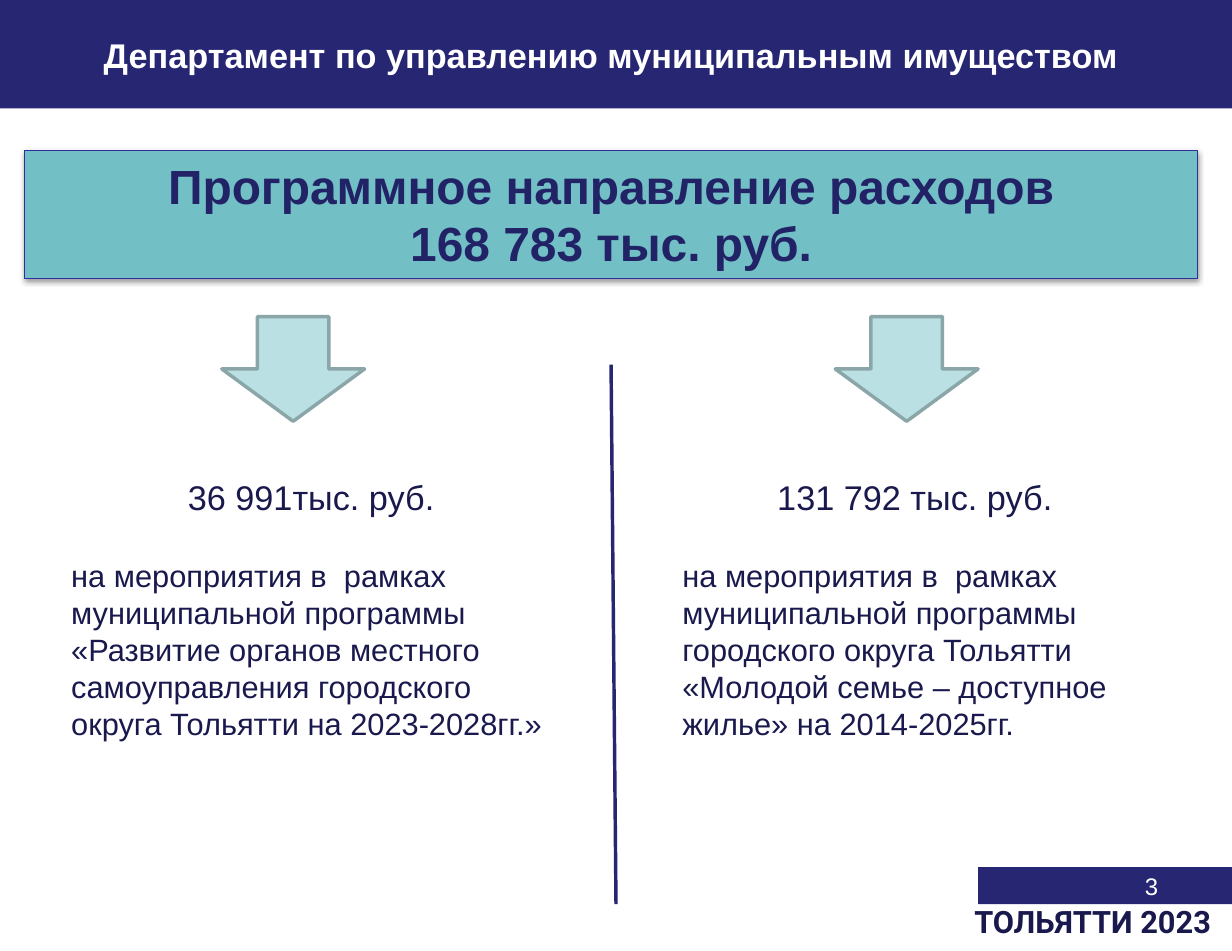
from lxml import etree
from pptx import Presentation
from pptx import util as u
from pptx.dml.color import RGBColor
from pptx.enum import shapes, text
from pptx.oxml import ns

NAVY = RGBColor(0x26, 0x26, 0x73)
INK = RGBColor(0x19, 0x19, 0x4D)
BANNER_INK = RGBColor(0x22, 0x22, 0x67)
BANNER_EDGE = RGBColor(0x2F, 0x2F, 0x98)
TEAL = RGBColor(0x72, 0xBF, 0xC5)
PALE_TEAL = RGBColor(0xBB, 0xE0, 0xE3)
ARROW_EDGE = RGBColor(0x8A, 0xA6, 0xA8)
WHITE = RGBColor(0xFF, 0xFF, 0xFF)

LEFT, CENTER, RIGHT = text.PP_ALIGN.LEFT, text.PP_ALIGN.CENTER, text.PP_ALIGN.RIGHT
TITLE_ONLY = 5


def add_effects(shape):
    return etree.SubElement(shape._element.spPr, ns.qn("a:effectLst"))


class BudgetSlide:
    font = "Arial"

    def __init__(self, deck):
        self.slide = deck.slides.add_slide(deck.slide_layouts[TITLE_ONLY])
        self.shapes = self.slide.shapes

    def format(self, paragraph, size, color, bold=False, align=LEFT, font=None):
        paragraph.alignment = align
        for run in paragraph.runs:
            run.font.name = font or self.font
            run.font.size = u.Pt(size)
            run.font.bold = bold
            run.font.color.rgb = color

    def title(self, words, height):
        title = self.shapes.title
        title.left, title.top = u.Inches(0), u.Inches(0)
        title.width, title.height = u.Inches(10), u.Inches(height)
        title.fill.solid()
        title.fill.fore_color.rgb = NAVY
        frame = title.text_frame
        frame.text = words
        frame.auto_size = text.MSO_AUTO_SIZE.NONE
        frame.vertical_anchor = text.MSO_ANCHOR.MIDDLE
        frame.margin_left, frame.margin_right = u.Inches(0.02), u.Inches(0.1)
        frame.margin_top, frame.margin_bottom = u.Inches(0.12), u.Inches(0.05)
        frame.paragraphs[0].line_spacing = 0.8
        self.format(frame.paragraphs[0], 20, WHITE, True, CENTER)

    def block(self, kind, box, fill, edge=None, weight=0.75):
        block = self.shapes.add_shape(kind, *map(u.Inches, box))
        block.shadow.inherit = False
        block.fill.solid()
        block.fill.fore_color.rgb = fill
        if edge is None:
            block.line.fill.background()
        else:
            block.line.color.rgb = edge
            block.line.width = u.Pt(weight)
        return block

    def banner(self, box, lines):
        banner = self.block(shapes.MSO_SHAPE.RECTANGLE, box, TEAL, BANNER_EDGE)
        banner.shadow.inherit = True
        shadow = etree.SubElement(
            add_effects(banner), ns.qn("a:outerShdw"), blurRad=str(u.Pt(3.1)),
            dist=str(u.Pt(1.6)), dir="5400000", rotWithShape="0")
        tint = etree.SubElement(shadow, ns.qn("a:srgbClr"), val="000000")
        etree.SubElement(tint, ns.qn("a:alpha"), val="38000")
        frame = banner.text_frame
        frame.vertical_anchor = text.MSO_ANCHOR.TOP
        frame.text = "\n".join(lines)
        for paragraph in frame.paragraphs:
            self.format(paragraph, 28, BANNER_INK, True, CENTER)

    def label(self, box, words):
        """Add a wrapping text box and return its paragraphs."""
        label = self.shapes.add_textbox(*map(u.Inches, box))
        label.text_frame.word_wrap = True
        label.text_frame.text = words
        return label.text_frame.paragraphs

    def divider(self, start, end):
        divider = self.shapes.add_connector(
            shapes.MSO_CONNECTOR.STRAIGHT, *map(u.Inches, start + end))
        divider.line.color.rgb = NAVY
        divider.line.width = u.Pt(2)
        add_effects(divider)

    def expense(self, arrow_left, left, width, amount, purpose):
        self.block(shapes.MSO_SHAPE.DOWN_ARROW, (arrow_left, 2.57, 1.16, 0.85),
                   PALE_TEAL, ARROW_EDGE, 2)
        total, details = self.label((left, 3.82, width, 2.5), f"{amount}\n{purpose}")
        self.format(total, 20, INK, align=CENTER)
        self.format(details, 18, INK)
        details.space_before = u.Pt(23)

    def footer(self, number, words):
        self.block(shapes.MSO_SHAPE.RECTANGLE, (7.94, 7.04, 2.06, 0.3), NAVY)
        page = self.label((7.17, 7.03, 2.33, 0.54), number)[0]
        self.format(page, 14, WHITE, align=RIGHT)
        mark = self.label((7.81, 7.34, 2.21, 0.35), words)[0]
        mark.line_spacing = 0.8
        self.format(mark, 18, INK, True, font="Roboto")


def main():
    deck = Presentation()
    deck.slide_width, deck.slide_height = u.Inches(10), u.Inches(7.72)
    budget = BudgetSlide(deck)
    budget.title("Департамент по управлению муниципальным имуществом", 0.88)
    budget.banner((0.2, 1.22, 9.52, 1.04),
                  ("Программное направление расходов", "168 783 тыс. руб."))
    budget.divider((4.96, 2.96), (5, 7.34))
    budget.expense(
        1.8, 0.48, 4.17, "36 991тыс. руб. ",
        "на мероприятия в  рамках муниципальной программы «Развитие органов "
        "местного самоуправления городского округа Тольятти на 2023-2028гг.»")
    budget.expense(
        6.78, 5.44, 4.05, "131 792 тыс. руб. ",
        "на мероприятия в  рамках муниципальной программы городского округа "
        "Тольятти «Молодой семье – доступное жилье» на 2014-2025гг.")
    budget.footer("3", "ТОЛЬЯТТИ 2023")
    deck.save("out.pptx")


if __name__ == "__main__":
    main()
